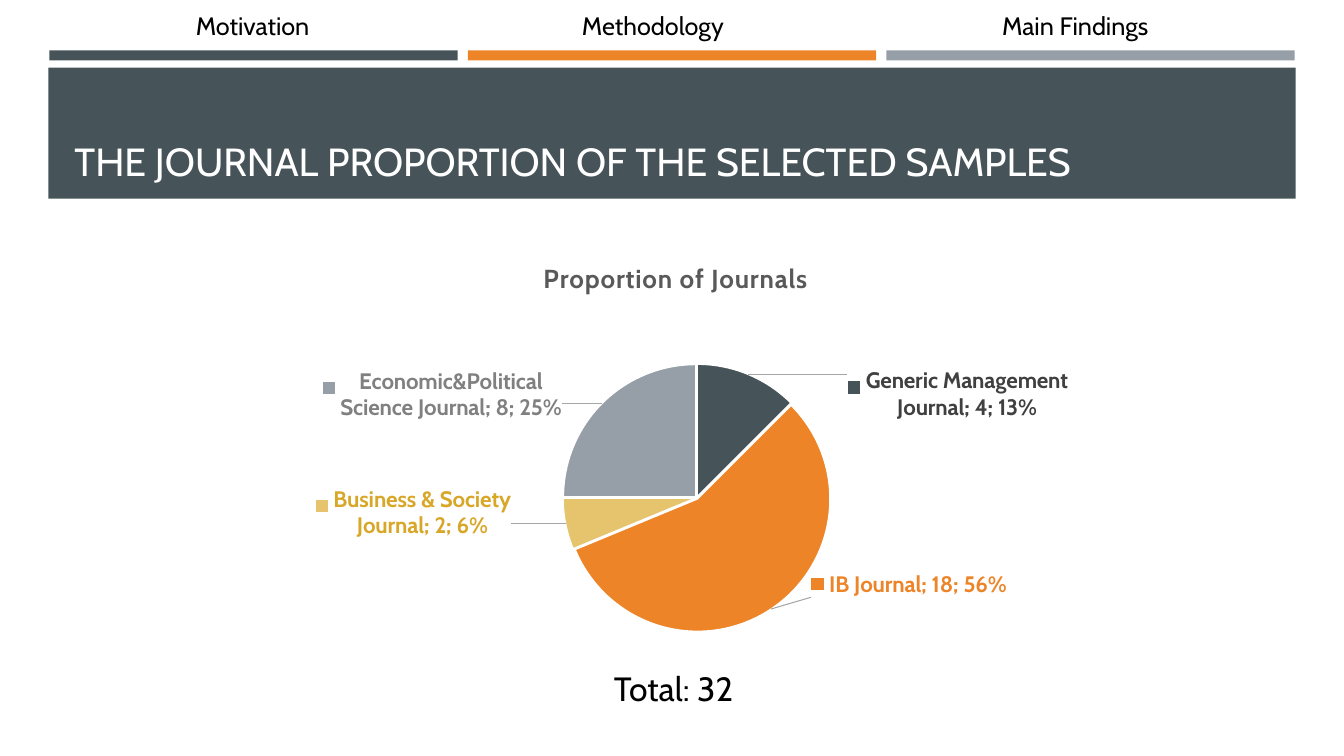
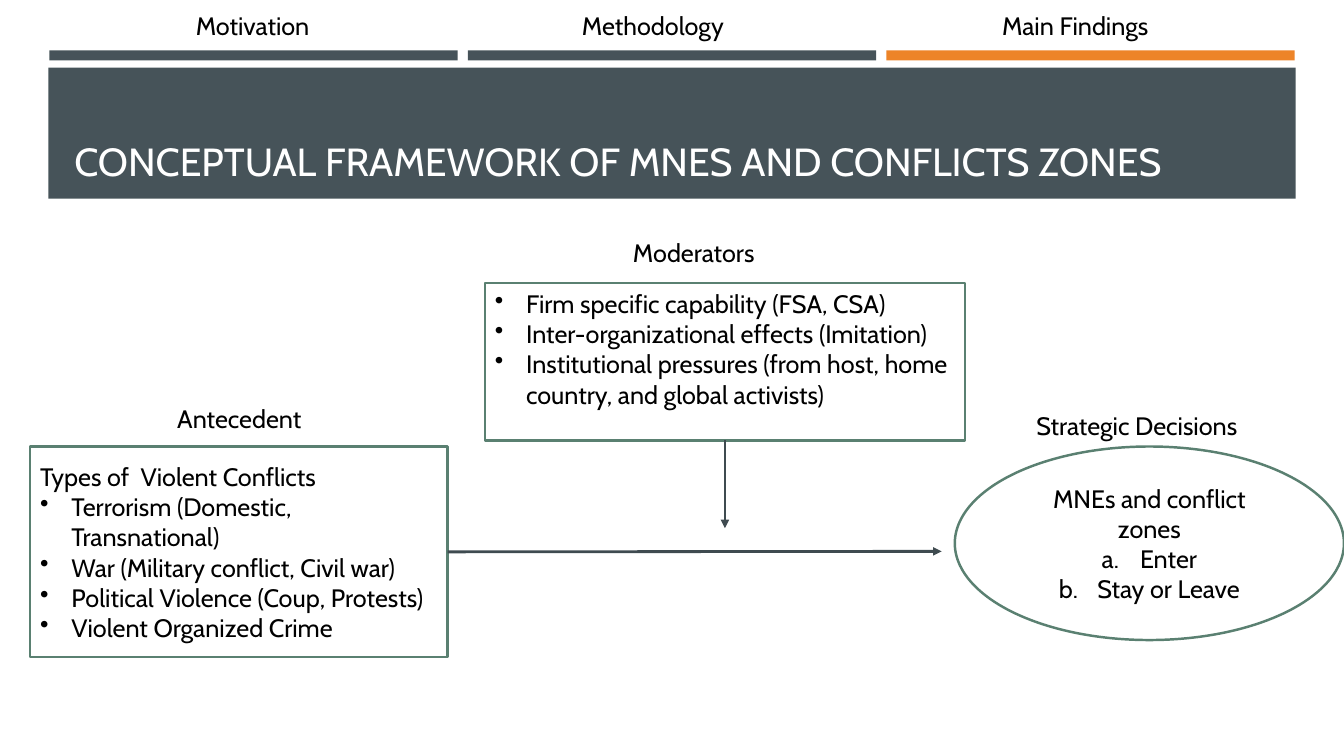
from lxml import etree
from pptx import Presentation
from pptx.chart.data import CategoryChartData
from pptx.dml.color import RGBColor
from pptx.enum import chart as charts, shapes, text
from pptx.oxml import ns
from pptx.util import Inches, Pt

# Shared look
FONT = "Cabin"
COLORS = {
    "slate": "465359", "orange": "ED8428", "gold": "E6C46D", "gray": "969FA7",
    "white": "FFFFFF", "black": "000000", "outline": "5A8071", "arrow": "3F4B50",
    "heading": "595959", "dark_label": "404040", "gold_label": "D9A728",
    "gray_label": "808080", "leader": "A6A6A6",
}
SLIDE_W, SLIDE_H = 13.33, 7.5
BAR_LEFT, BAR_TOP, BAR_W, BAR_H, BAR_PITCH = 0.49, 0.5, 4.05, 0.1, 4.15
BAND = (0.48, 0.67, 12.37, 1.3)
TITLE = (0.64, 0.77, 12.06, 1.11)
SECTIONS = [("Motivation", 0.47), ("Methodology", 4.44), ("Main Findings", 8.63)]
RECT, OVAL = shapes.MSO_SHAPE.RECTANGLE, shapes.MSO_SHAPE.OVAL
MIDDLE, BOTTOM = text.MSO_ANCHOR.MIDDLE, text.MSO_ANCHOR.BOTTOM
LEFT, CENTER = text.PP_ALIGN.LEFT, text.PP_ALIGN.CENTER

# Slide 1: journals
JOURNALS_TITLE = "THE JOURNAL PROPORTION OF THE SELECTED SAMPLES"
JOURNALS_BARS = ["slate", "orange", "gray"]
CHART_TITLE = "Proportion of Journals"
CHART_BOX = (0.64, 2.32, 12.06, 4.26)
CHART_TITLE_AT = {"x": 0.39, "y": 0.05}
PIE_AT = {"x": 0.41, "y": 0.3, "w": 0.22, "h": 0.63}
JOURNALS = [  # name, count, slice colour, label colour, label shift
    ("Generic Management Journal", 4, "slate", "dark_label", (0.08, 0.12)),
    ("IB Journal", 18, "orange", "orange", (0.03, -0.1)),
    ("Business & Society Journal", 2, "gold", "gold_label", (-0.04, -0.09)),
    ("Economic&Political Science Journal", 8, "gray", "gray_label", (-0.03, 0.05)),
]
TOTAL = ("Total: 32", (5.99, 6.58, 1.97, 0.5))

# Slide 2: framework; each line is (text, list marker)
FRAMEWORK_TITLE = "CONCEPTUAL FRAMEWORK OF MNES AND CONFLICTS ZONES"
FRAMEWORK_BARS = ["slate", "slate", "orange"]
HEADINGS = [
    ("Strategic Decisions", (10.18, 4.02, 2.54, 0.4)),
    ("Antecedents", (1.66, 3.95, 1.53, 0.4)),
    ("Moderators", (6.18, 2.31, 1.53, 0.4)),
]
DECISIONS = [("MNEs and conflict zones", None), ("Enter", "letter"),
             ("Stay or Leave", "letter")]
ANTECEDENTS = [
    ("Types of  Violent Conflicts", None),
    ("Terrorism (Domestic, Transnational)", "dot"),
    ("War (Military conflict, Civil war)", "dot"),
    ("Political Violence (Coup, Protests)", "dot"),
    ("Violent Organized Crime", "dot"),
]
MODERATORS = [
    ("Firm specific capability (FSA, CSA)", "dot"),
    ("Inter-organizational effects (Imitation)", "dot"),
    ("Institutional pressures (from host, home country, and global activists)", "dot"),
]
MARKERS = {  # tag, attributes, indent
    "dot": ("a:buChar", {"char": "•"}, 0.31),
    "letter": ("a:buAutoNum", {"type": "alphaLcPeriod"}, 0.38),
}


def rgb(name):
    return RGBColor.from_string(COLORS[name])


def inches(values):
    return [Inches(value) for value in values]


def child(parent, tag, **attributes):
    return etree.SubElement(parent, ns.qn(tag), attributes)


def set_font(font, size, color, bold=False):
    formats = {"name": FONT, "size": Pt(size), "bold": bold}
    for key, value in formats.items():
        setattr(font, key, value)
    font.color.rgb = rgb(color)


def write(shape, lines, size=18, color="black", align=LEFT,
          anchor=text.MSO_ANCHOR.TOP, wrap=True):
    frame = shape.text_frame
    frame.word_wrap, frame.vertical_anchor = wrap, anchor
    for number, (words, marker) in enumerate(lines):
        paragraph = frame.add_paragraph() if number else frame.paragraphs[0]
        paragraph.alignment = align
        run = paragraph.add_run()
        run.text = words
        set_font(run.font, size, color)
        if marker:
            tag, attributes, indent = MARKERS[marker]
            properties = paragraph._p.get_or_add_pPr()
            properties.set("marL", str(Inches(indent)))
            properties.set("indent", str(-Inches(indent)))
            child(properties, tag, **attributes)


def add_text(slide, words, box, **style):
    write(slide.shapes.add_textbox(*inches(box)), [(words, None)], **style)


def add_block(slide, kind, box, fill, outline=None):
    block = slide.shapes.add_shape(kind, *inches(box))
    block.shadow.inherit = False
    block.fill.solid()
    block.fill.fore_color.rgb = rgb(fill)
    if outline:
        block.line.color.rgb, block.line.width = rgb(outline), Pt(1.75)
    else:
        block.line.fill.background()
    return block


def add_arrow(slide, source, site, start, end):
    arrow = slide.shapes.add_connector(
        shapes.MSO_CONNECTOR.STRAIGHT, *inches(start + end))
    arrow.begin_connect(source, site)
    arrow.line.color.rgb, arrow.line.width = rgb("arrow"), Pt(2)
    child(arrow.line._get_or_add_ln(), "a:tailEnd", type="triangle")
    child(arrow._element.spPr, "a:effectLst")


def add_framed_slide(deck, title, bar_colors):
    slide = deck.slides.add_slide(deck.slide_layouts[6])
    for column, ((section, left), color) in enumerate(zip(SECTIONS, bar_colors)):
        bar = (BAR_LEFT + column * BAR_PITCH, BAR_TOP, BAR_W, BAR_H)
        add_block(slide, RECT, bar, color)
        add_text(slide, section, (left, 0, 4.07, 0.5), align=CENTER, anchor=MIDDLE)
    add_block(slide, RECT, BAND, "slate")
    add_text(slide, title, TITLE, size=28, color="white", anchor=BOTTOM)
    return slide


def chart_layout(places, inner=False, absolute=True):
    layout = etree.Element(ns.qn("c:layout"))
    manual = child(layout, "c:manualLayout")
    if inner:
        child(manual, "c:layoutTarget", val="inner")
    if absolute:
        for key in "xy":
            child(manual, f"c:{key}Mode", val="edge")
    for key, value in places.items():
        child(manual, f"c:{key}", val=str(value))
    return layout


def replace_layout(parent, layout, index):
    for old in parent.findall(ns.qn("c:layout")):
        parent.remove(old)
    parent.insert(index, layout)


def add_pie(slide):
    data = CategoryChartData()
    data.categories = [journal[0] for journal in JOURNALS]
    data.add_series(CHART_TITLE, [journal[1] for journal in JOURNALS])
    chart = slide.shapes.add_chart(
        charts.XL_CHART_TYPE.PIE, *inches(CHART_BOX), data).chart
    set_font(chart.font, 10, "black")
    chart.has_legend = False

    # Chart title and plot place
    chart.has_title = True
    chart.chart_title.include_in_layout = False
    heading = chart.chart_title.text_frame.paragraphs[0].add_run()
    heading.text = CHART_TITLE
    set_font(heading.font, 18.6, "heading", bold=True)
    heading._r.get_or_add_rPr().set("spc", "50")
    replace_layout(chart.chart_title._element, chart_layout(CHART_TITLE_AT), 1)
    plot_area = chart._chartSpace.chart.plotArea
    replace_layout(plot_area, chart_layout(PIE_AT, inner=True), 0)

    # Slices and their labels
    plot = chart.plots[0]
    plot.vary_by_categories = True
    series = plot.series[0]
    shown = ("LegendKey", "Val", "CatName", "Percent")
    for index, (_, _, color, label_color, shift) in enumerate(JOURNALS):
        point = series.points[index]
        point.format.fill.solid()
        point.format.fill.fore_color.rgb = rgb(color)
        point.format.line.color.rgb = rgb("white")
        point.format.line.width = Pt(1)
        set_font(point.data_label.font, 16, label_color, bold=True)
        point.data_label.position = charts.XL_LABEL_POSITION.OUTSIDE_END
        label = series._element.findall(".//" + ns.qn("c:dLbl"))[index]
        replace_layout(label, chart_layout(dict(zip("xy", shift)), absolute=False), 1)
        for part in shown:
            label.find(ns.qn(f"c:show{part}")).set("val", "1")
        child(label, "c:separator").text = "; "

    # Slight explosion and leader lines
    explosion = etree.Element(ns.qn("c:explosion"), val="1")
    series._element.find(ns.qn("c:dPt")).addprevious(explosion)
    labels = series._element.find(ns.qn("c:dLbls"))
    leaders_on = labels.find(ns.qn("c:showLeaderLines"))
    if leaders_on is None:
        leaders_on = child(labels, "c:showLeaderLines")
    leaders_on.set("val", "1")
    line = child(child(child(labels, "c:leaderLines"), "c:spPr"), "a:ln", w=str(Pt(0.75)))
    child(child(line, "a:solidFill"), "a:srgbClr", val=COLORS["leader"])


def build_journals(deck):
    slide = add_framed_slide(deck, JOURNALS_TITLE, JOURNALS_BARS)
    add_pie(slide)
    add_text(slide, *TOTAL, size=24)


def build_framework(deck):
    slide = add_framed_slide(deck, FRAMEWORK_TITLE, FRAMEWORK_BARS)
    for words, box in HEADINGS:
        add_text(slide, words, box, wrap=False)
    decisions = add_block(slide, OVAL, (9.47, 4.43, 3.86, 1.92), "white", "outline")
    write(decisions, DECISIONS, align=CENTER, anchor=MIDDLE)
    antecedents = add_block(slide, RECT, (0.3, 4.43, 4.14, 2.09), "white", "outline")
    write(antecedents, ANTECEDENTS, anchor=MIDDLE)
    moderators = add_block(slide, RECT, (4.81, 2.81, 4.76, 1.56), "white", "outline")
    write(moderators, MODERATORS)
    add_arrow(slide, antecedents, 3, (4.44, 5.47), (9.34, 5.47))
    add_arrow(slide, moderators, 2, (7.19, 4.37), (7.19, 5.24))


def main():
    deck = Presentation()
    deck.slide_width, deck.slide_height = inches((SLIDE_W, SLIDE_H))
    build_journals(deck)
    build_framework(deck)
    deck.save("out.pptx")


if __name__ == "__main__":
    main()
